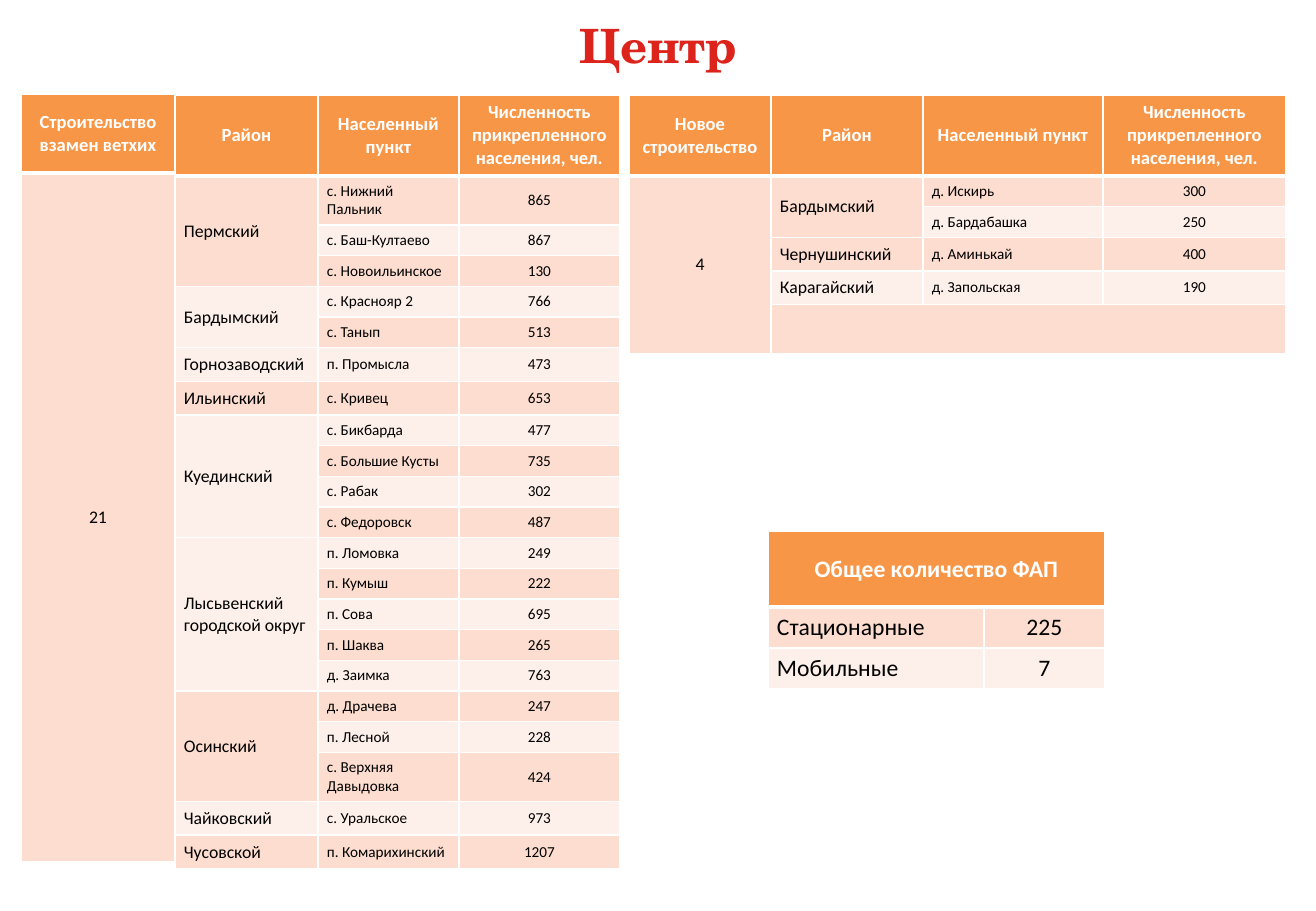
from lxml import etree
from pptx import Presentation
from pptx import util as u
from pptx.dml import color
from pptx.enum import text
from pptx.oxml import ns

PX = 7526
COLORS = {"white": "FFFFFF", "black": "000000", "title": "DC241D",
          "header": "F79646", "odd": "FCDDCF", "even": "FDEFE9"}
BODY_FONT = "Calibri"
LEFT, CENTER = text.PP_ALIGN.LEFT, text.PP_ALIGN.CENTER
HEADER_HEIGHT, ROW_HEIGHT, SINGLE_HEIGHT, TWO_LINE_HEIGHT = 80, 30, 33, 49
TWO_LINE_VILLAGES = {"с. Нижний Пальник", "с. Верхняя Давыдовка"}
LIST_HEADER = ["Район", "Населенный пункт",
               "Численность прикрепленного населения, чел."]

REPLACEMENTS = [
    ("Пермский", [("с. Нижний Пальник", 865), ("с. Баш-Култаево", 867),
                  ("с. Новоильинское", 130)]),
    ("Бардымский", [("с. Краснояр 2", 766), ("с. Танып", 513)]),
    ("Горнозаводский", [("п. Промысла", 473)]),
    ("Ильинский", [("с. Кривец", 653)]),
    ("Куединский", [("с. Бикбарда", 477), ("с. Большие Кусты", 735),
                    ("с. Рабак", 302), ("с. Федоровск", 487)]),
    ("Лысьвенский\nгородской округ",
     [("п. Ломовка", 249), ("п. Кумыш", 222), ("п. Сова", 695),
      ("п. Шаква", 265), ("д. Заимка", 763)]),
    ("Осинский", [("д. Драчева", 247), ("п. Лесной", 228),
                  ("с. Верхняя Давыдовка", 424)]),
    ("Чайковский", [("с. Уральское", 973)]),
    ("Чусовской", [("п. Комарихинский", 1207)]),
]
NEW_SITES = [
    ("Бардымский", [("д. Искирь", 300), ("д. Бардабашка", 250)]),
    ("Чернушинский", [("д. Аминькай", 400)]),
    ("Карагайский", [("д. Запольская", 190)]),
]


def px(length):
    return u.Emu(length * PX)


def rgb(name):
    return color.RGBColor.from_string(COLORS[name])


def format_text(para, size, font, ink, bold, align):
    para.alignment = align
    for span in para.runs:
        span.font.size = u.Pt(size)
        span.font.name = font
        span.font.bold = bold
        span.font.color.rgb = rgb(ink)


def add_borders(cell, top, bottom):
    """Draw white cell edges; top and bottom are widths in points."""
    properties = cell._tc.get_or_add_tcPr()
    for side, width in (("L", 1), ("R", 1), ("T", top), ("B", bottom)):
        line = etree.SubElement(properties, ns.qn(f"a:ln{side}"),
                                w=str(u.Pt(width)))
        fill = etree.SubElement(line, ns.qn("a:solidFill"))
        etree.SubElement(fill, ns.qn("a:srgbClr"), val=COLORS["white"])


def add_grid(page, corner, widths, heights, rows, columns, header_size, merges=()):
    """Add a banded table; columns holds a body (size, alignment) per column."""
    left, top = corner
    frame = page.shapes.add_table(len(rows), len(widths), px(left), px(top),
                                  px(sum(widths)), px(sum(heights)))
    table = frame.table
    for column, width in zip(table.columns, widths):
        column.width = px(width)
    for row, height in zip(table.rows, heights):
        row.height = px(height)
    for r, values in enumerate(rows):
        for c, value in enumerate(values):
            cell = table.cell(r, c)
            add_borders(cell, 3 if r == 1 else 1, 3 if r == 0 else 1)
            cell.fill.solid()
            band = "odd" if r % 2 else "even"
            cell.fill.fore_color.rgb = rgb(band if r else "header")
            cell.vertical_anchor = text.MSO_ANCHOR.MIDDLE
            cell.margin_left = cell.margin_right = px(9)
            para = cell.text_frame.paragraphs[0]
            para.text = str(value)
            size, align = columns[c] if r else (header_size, CENTER)
            format_text(para, size, BODY_FONT, "black" if r else "white",
                        r == 0, align)
    for first_row, first_column, last_row, last_column in merges:
        table.cell(first_row, first_column).merge(
            table.cell(last_row, last_column))


def list_villages(districts, district_column):
    """Return the rows, heights and district merges of a village list."""
    rows, heights, merges = [], [], []
    for district, villages in districts:
        start = len(rows) + 1
        for i, (village, people) in enumerate(villages):
            rows.append(["" if i else district, village, people])
            usual = ROW_HEIGHT if len(villages) > 1 else SINGLE_HEIGHT
            heights.append(TWO_LINE_HEIGHT if village in TWO_LINE_VILLAGES
                           else usual)
        if len(villages) > 1:
            merges.append((start, district_column, len(rows), district_column))
    return rows, heights, merges


def add_title(page, left, top, width, height):
    title = page.shapes.title
    title.left, title.top, title.width, title.height = map(
        px, (left, top, width, height))
    title.text_frame.vertical_anchor = text.MSO_ANCHOR.MIDDLE
    para = title.text_frame.paragraphs[0]
    para.text = "Центр"
    format_text(para, 28, "TeX Gyre Schola", "title", True, CENTER)


def add_replacements(page, left, top):
    count_width = 154
    add_grid(page, (left, top), [count_width], [79, 689],
             [["Строительство взамен ветхих"], [21]], [(10.5, CENTER)], 11)
    rows, heights, merges = list_villages(REPLACEMENTS, 0)
    add_grid(page, (left + count_width, top + 1), [143, 141, 161],
             [HEADER_HEIGHT] + heights, [LIST_HEADER] + rows,
             [(10.5, LEFT), (9, LEFT), (9, CENTER)], 11, merges)


def add_new_sites(page, left, top):
    villages, heights, merges = list_villages(NEW_SITES, 1)
    rows = [["Новое строительство"] + LIST_HEADER]
    rows += [["" if i else 4] + row for i, row in enumerate(villages)]
    rows.append([""] * 4)
    last = len(rows) - 1
    merges += [(1, 0, last, 0), (last, 1, last, 3)]
    add_grid(page, (left, top), [142, 152, 180, 183],
             [HEADER_HEIGHT] + heights + [TWO_LINE_HEIGHT], rows,
             [(10.5, CENTER), (10.5, LEFT), (9, LEFT), (9, CENTER)], 11, merges)


def add_totals(page, left, top):
    add_grid(page, (left, top), [216, 121], [76, 41, 41],
             [["Общее количество ФАП", ""], ["Стационарные", 225],
              ["Мобильные", 7]],
             [(14, LEFT), (14, CENTER)], 14, [(0, 0, 0, 1)])


def main():
    deck = Presentation()
    deck.slide_width, deck.slide_height = px(1316), px(911)
    page = deck.slides.add_slide(deck.slide_layouts[5])
    add_totals(page, 768, 531)
    add_replacements(page, 21, 94)
    add_new_sites(page, 629, 95)
    add_title(page, 0, 10, 1316, 70)
    deck.save("out.pptx")


if __name__ == "__main__":
    main()
